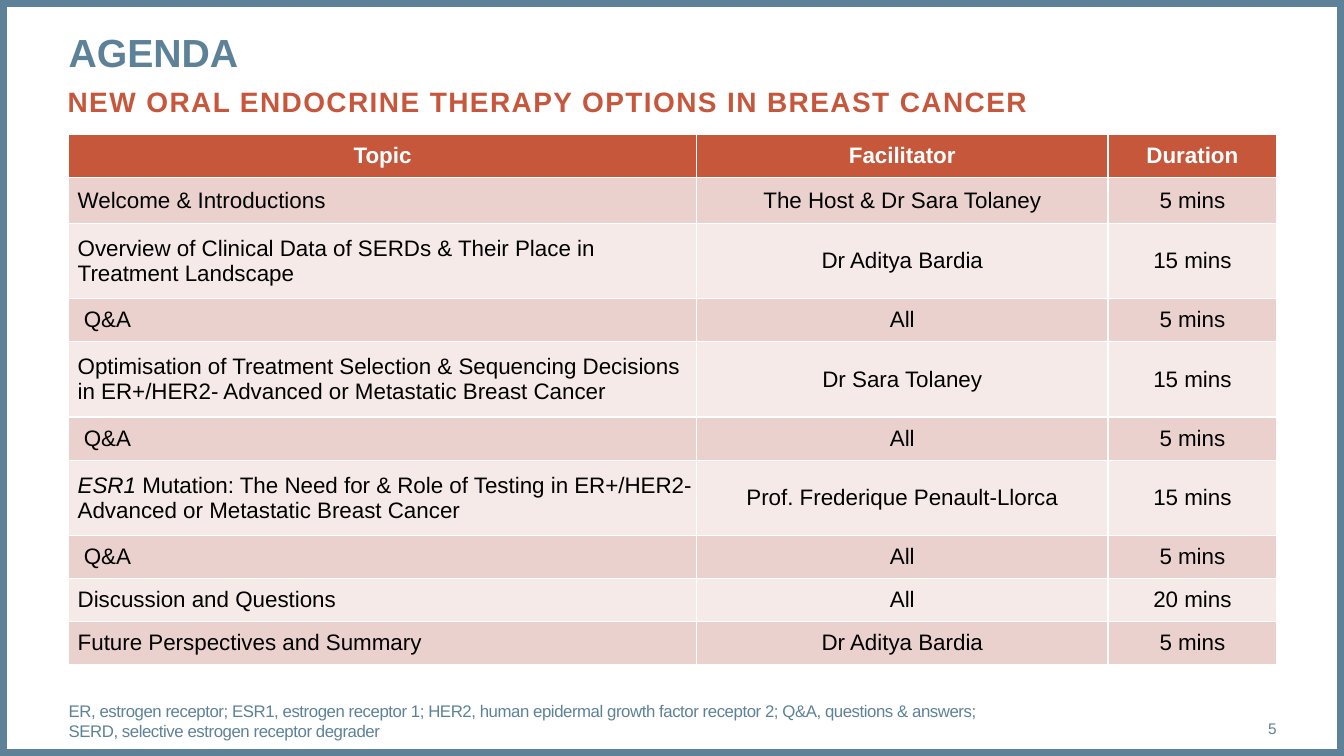
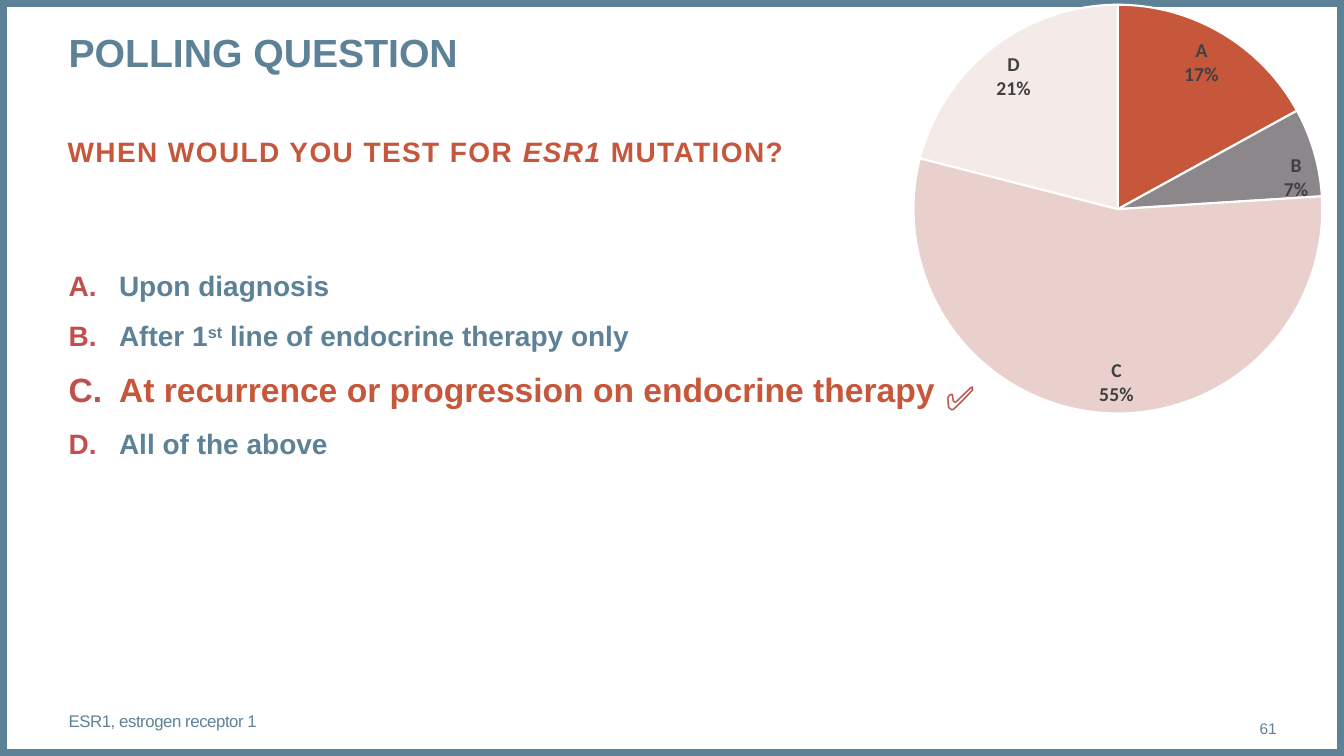
"""Build an agenda slide and a polling-question slide on one shared theme."""
from dataclasses import dataclass

from lxml import etree
from pptx import Presentation
from pptx.chart.data import CategoryChartData
from pptx.dml.color import RGBColor
from pptx.enum.chart import XL_CHART_TYPE as ChartType, XL_LABEL_POSITION as LabelPosition
from pptx.enum.shapes import MSO_SHAPE as Shape
from pptx.enum.text import MSO_ANCHOR as Anchor, MSO_AUTO_SIZE as AutoSize, PP_ALIGN as Align
from pptx.oxml.ns import qn
from pptx.util import Pt


@dataclass(frozen=True)
class Theme:
    font: str = "Arial"
    chart_font: str = "Calibri"
    slate: str = "5D8298"
    rust: str = "C7573C"
    header: str = "C6573B"
    marker: str = "C0504D"
    white: str = "FFFFFF"
    black: str = "000000"
    label: str = "404040"
    bands: tuple = ("EAD1CE", "F5EAE8")
    slices: tuple = ("C6573B", "8B878B", "E9D0CD", "F4EAE7")
    title_size: float = 28
    heading_size: float = 20
    answer_size: float = 24
    cell_size: float = 16
    label_size: float = 14
    note_size: float = 12
    number_size: float = 11


THEME = Theme()
WIDTH, HEIGHT = 960, 540
LEFT, CONTENT_WIDTH = 49, 863

AGENDA = {
    "title": "AGENDA",
    "heading": [("NEW ORAL ENDOCRINE THERAPY OPTIONS IN BREAST CANCER", {})],
    "heading_top": 60.5,
    "note": "ER, estrogen receptor; ESR1, estrogen receptor 1; HER2, human epidermal growth "
            "factor receptor 2; Q&A, questions & answers; SERD, selective estrogen receptor degrader",
    "note_width": 675,
    "number": "5",
}
AGENDA_HEADER = ("Topic", "Facilitator", "Duration")
AGENDA_ROWS = [
    ("Welcome & Introductions", "The Host & Dr Sara Tolaney", "5 mins"),
    ("Overview of Clinical Data of SERDs & Their Place in Treatment Landscape",
     "Dr Aditya Bardia", "15 mins"),
    (" Q&A", "All", "5 mins"),
    ("Optimisation of Treatment Selection & Sequencing Decisions in ER+/HER2- "
     "Advanced or Metastatic Breast Cancer", "Dr Sara Tolaney", "15 mins"),
    (" Q&A", "All", "5 mins"),
    ([("ESR1", {"italic": True}),
      (" Mutation: The Need for & Role of Testing in ER+/HER2-Advanced or "
       "Metastatic Breast Cancer", {})], "Prof. Frederique Penault-Llorca", "15 mins"),
    (" Q&A", "All", "5 mins"),
    ("Discussion and Questions", "All", "20 mins"),
    ("Future Perspectives and Summary", "Dr Aditya Bardia", "5 mins"),
]
COLUMN_WIDTHS = (448.5, 294, 120.5)
SINGLE, FIRST, DOUBLE = 30.8, 33, 53.8
ROW_HEIGHTS = (SINGLE, FIRST, DOUBLE, SINGLE, DOUBLE, SINGLE, DOUBLE, SINGLE, SINGLE, SINGLE)

POLL = {
    "title": "POLLING QUESTION",
    "heading": [("WHEN WOULD YOU TEST FOR ", {}), ("ESR1 ", {"italic": True}), ("MUTATION?", {})],
    "heading_top": 95.8,
    "note": "ESR1, estrogen receptor 1",
    "note_width": 801,
    "number": "61",
}
CHOSEN = {"size": THEME.answer_size, "color": THEME.header}
ANSWERS = [
    [("Upon diagnosis", {})],
    [("After 1", {}), ("st", {"baseline": 30000}), (" line of endocrine therapy only", {})],
    [("At recurrence or progression on endocrine therapy", CHOSEN)],
    [("All of the above", {})],
]
VOTES = {"A": 17, "B": 7, "C": 55, "D": 21}
PIE_FRAME = (560, -6, 497, 314)
PIE_LAYOUT = {"x": 0.185, "y": 0.03, "w": 0.59, "h": 0.93}


def points(*lengths):
    return [Pt(length) for length in lengths]


def paint(fill, color):
    fill.solid()
    fill.fore_color.rgb = RGBColor.from_string(color)


def add_spans(para, runs, **style):
    for text, changes in [(runs, {})] if isinstance(runs, str) else runs:
        look = {"bold": False, "italic": False, **style, **changes}
        span = para.add_run()
        span.text = text
        span.font.name = THEME.font
        span.font.size = Pt(look["size"])
        span.font.color.rgb = RGBColor.from_string(look["color"])
        span.font.bold, span.font.italic = look["bold"], look["italic"]
        for name in ("spc", "baseline"):
            if name in look:
                span._r.get_or_add_rPr().set(name, str(look[name]))


def prepare(box, frame, anchor=Anchor.TOP, wrap=True):
    box.left, box.top, box.width, box.height = points(*frame)
    text = box.text_frame
    text.margin_left = text.margin_top = text.margin_right = text.margin_bottom = 0
    text.vertical_anchor = anchor
    text.auto_size = AutoSize.NONE
    text.word_wrap = wrap
    para = text.paragraphs[0]
    para.alignment = Align.LEFT
    para.space_before = Pt(0)
    return para


def add_text_box(page, frame, anchor=Anchor.TOP, wrap=True):
    return prepare(page.shapes.add_textbox(*points(*frame)), frame, anchor, wrap)


def add_frame(page, layout):
    border = page.shapes.add_shape(Shape.RECTANGLE, *points(0, 0, WIDTH, HEIGHT))
    border.shadow.inherit = False
    border.fill.background()
    border.line.color.rgb = RGBColor.from_string(THEME.slate)
    border.line.width = Pt(10)
    layout.shapes.element.append(border.element)


def add_page(deck, layout, content, keep):
    page = deck.slides.add_slide(layout)
    slots = {slot.placeholder_format.idx: slot for slot in page.placeholders}
    para = prepare(slots[0], (LEFT, 20, CONTENT_WIDTH, 68))
    add_spans(para, content["title"], size=THEME.title_size, color=THEME.slate, bold=True)
    para = prepare(slots[1], (48.3, content["heading_top"], 864, 55.5))
    add_spans(para, content["heading"], size=THEME.heading_size, color=THEME.rust,
              bold=True, spc=100)
    para = prepare(slots[3], (LEFT, 500.4, content["note_width"], 28.8), Anchor.MIDDLE)
    add_spans(para, content["note"], size=THEME.note_size, color=THEME.slate, spc=-30)
    para = add_text_box(page, (850, 506, 62, 28.8), Anchor.MIDDLE)
    para.alignment = Align.RIGHT
    add_spans(para, content["number"], size=THEME.number_size, color=THEME.slate)
    for index, slot in slots.items():
        if index not in (0, 1, 3, *keep):
            slot.element.getparent().remove(slot.element)
    return page, slots


def add_agenda(page):
    rows = [AGENDA_HEADER, *AGENDA_ROWS]
    table = page.shapes.add_table(len(rows), len(COLUMN_WIDTHS), *points(
        LEFT, 95.8, sum(COLUMN_WIDTHS), sum(ROW_HEIGHTS))).table
    for column, width in zip(table.columns, COLUMN_WIDTHS):
        column.width = Pt(width)
    for r, (values, height) in enumerate(zip(rows, ROW_HEIGHTS)):
        table.rows[r].height = Pt(height)
        heading = r == 0
        for c, value in enumerate(values):
            cell = table.cell(r, c)
            topic = c == 0 and not heading
            cell.margin_left = Pt(6.5 if topic else 0)
            cell.margin_top = cell.margin_right = cell.margin_bottom = 0
            cell.vertical_anchor = Anchor.MIDDLE
            paint(cell.fill, THEME.header if heading else THEME.bands[(r - 1) % 2])
            para = cell.text_frame.paragraphs[0]
            para.alignment = Align.LEFT if topic else Align.CENTER
            add_spans(para, value, size=THEME.cell_size, bold=heading,
                      color=THEME.white if heading else THEME.black)


def add_letter(para):
    props = para._p.get_or_add_pPr()
    props.set("marL", str(Pt(36)))
    props.set("indent", str(-Pt(36)))
    color = etree.SubElement(props, qn("a:buClr"))
    etree.SubElement(color, qn("a:srgbClr"), val=THEME.marker)
    etree.SubElement(props, qn("a:buFont"), typeface="+mj-lt")
    etree.SubElement(props, qn("a:buAutoNum"), type="alphaUcPeriod")


def add_answers(box):
    first = prepare(box, (LEFT, 191.5, CONTENT_WIDTH, 276))
    for i, answer in enumerate(ANSWERS):
        para = box.text_frame.add_paragraph() if i else first
        para.alignment = Align.LEFT
        para.space_before = Pt(12 if i else 0)
        add_letter(para)
        add_spans(para, answer, size=THEME.heading_size, color=THEME.slate, bold=True)


def add_votes(page):
    data = CategoryChartData()
    data.categories = list(VOTES)
    data.add_series("Series 1", list(VOTES.values()))
    chart = page.shapes.add_chart(ChartType.PIE, *points(*PIE_FRAME), data).chart
    chart.has_legend = chart.has_title = False
    chart.font.name, chart.font.size = THEME.chart_font, Pt(10)
    chart.plots[0].vary_by_categories = True
    series = chart.plots[0].series[0]
    for i, color in enumerate(THEME.slices):
        wedge = series.points[i].format
        paint(wedge.fill, color)
        wedge.line.color.rgb = RGBColor.from_string(THEME.white)
        wedge.line.width = Pt(1.5)
    labels = series.data_labels
    labels.show_category_name = labels.show_percentage = True
    labels.show_value = False
    labels.number_format, labels.number_format_is_linked = "0%", False
    labels.position = LabelPosition.INSIDE_END
    labels.font.name, labels.font.size, labels.font.bold = (
        THEME.chart_font, Pt(THEME.label_size), True)
    labels.font.color.rgb = RGBColor.from_string(THEME.label)
    separator = etree.Element(qn("c:separator"))
    separator.text = "\n"
    chart.element.xpath(".//c:dLbls/c:showBubbleSize")[0].addnext(separator)
    plot_area = chart.element.xpath(".//c:plotArea")[0]
    for old in plot_area.findall(qn("c:layout")):
        plot_area.remove(old)
    layout = etree.Element(qn("c:layout"))
    manual = etree.SubElement(layout, qn("c:manualLayout"))
    settings = {"layoutTarget": "inner", "xMode": "edge", "yMode": "edge", **PIE_LAYOUT}
    for name, value in settings.items():
        etree.SubElement(manual, qn(f"c:{name}"), val=str(value))
    plot_area.insert(0, layout)


def main():
    deck = Presentation()
    deck.slide_width, deck.slide_height = points(WIDTH, HEIGHT)
    layout = deck.slide_layouts.get_by_name("Comparison")
    page, _ = add_page(deck, layout, AGENDA, keep=())
    add_frame(page, layout)
    add_agenda(page)
    page, slots = add_page(deck, layout, POLL, keep=(2,))
    add_answers(slots[2])
    add_votes(page)
    tick = add_text_box(page, (675.4, 269.3, 33, 29), wrap=False)
    add_spans(tick, "✅", size=THEME.answer_size, color=THEME.marker)
    deck.save("out.pptx")


if __name__ == "__main__":
    main()
